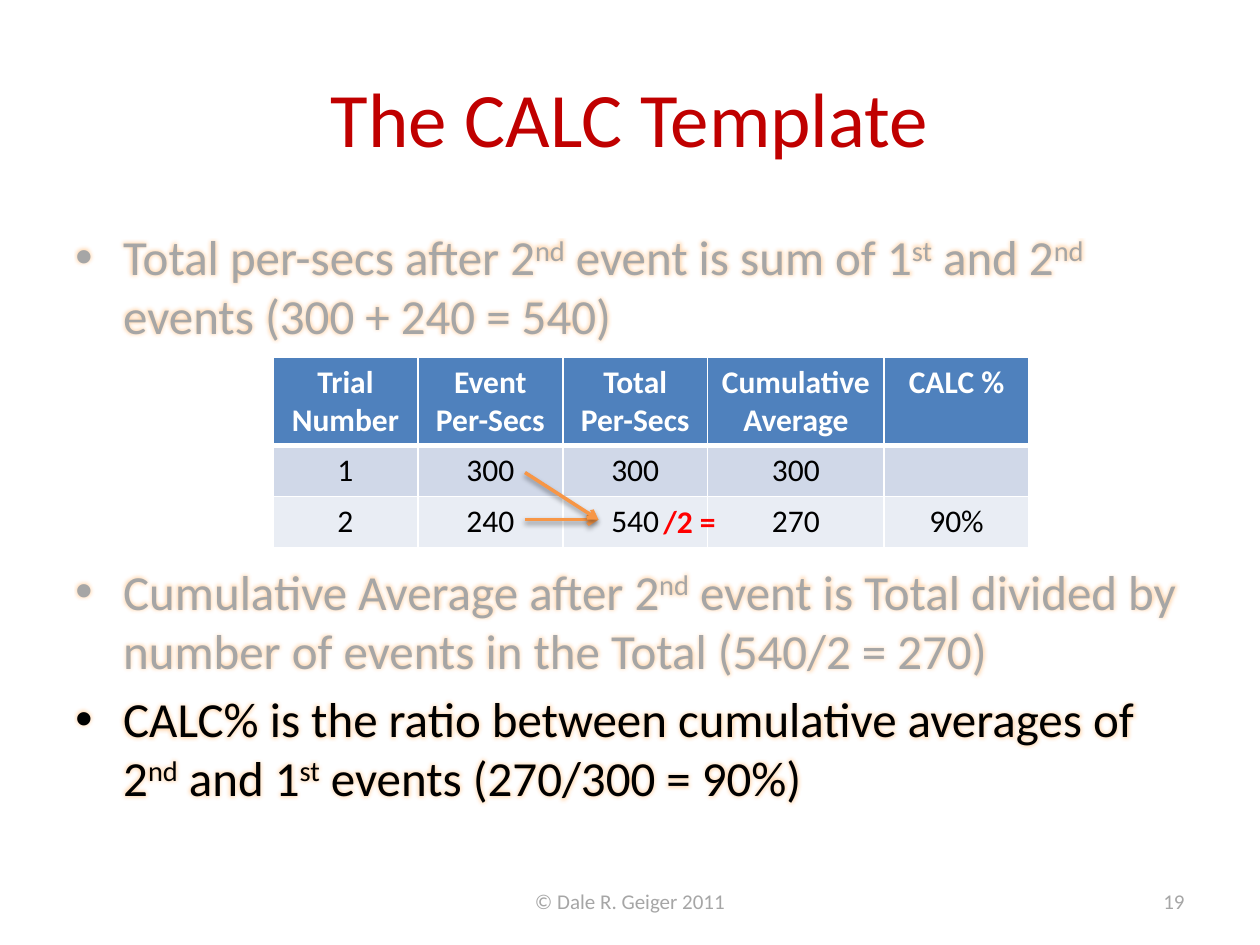
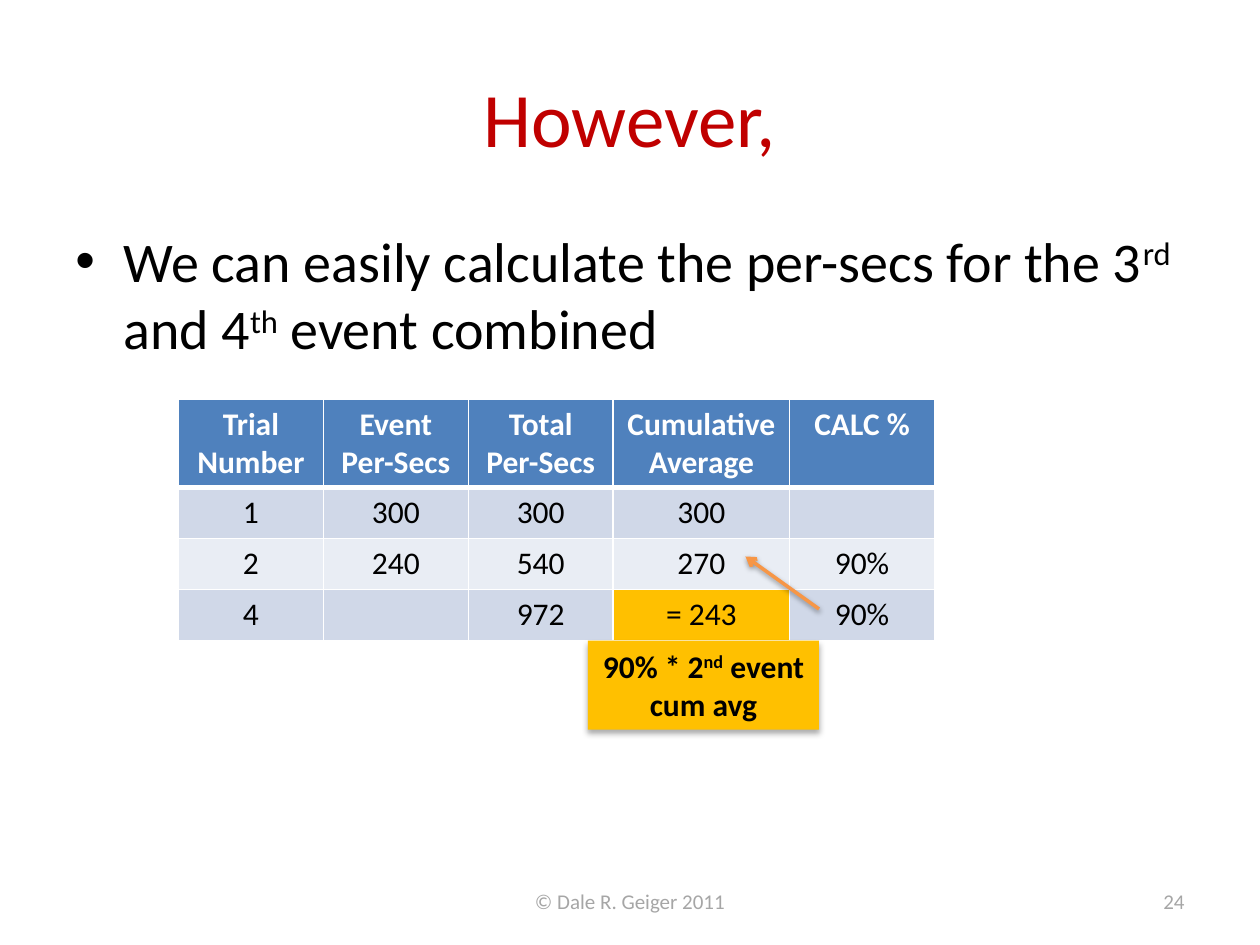
"""Builds two slides on the CALC learning-curve table."""
from dataclasses import dataclass

from lxml.etree import SubElement
from pptx import Presentation
from pptx.dml.color import RGBColor
from pptx.enum.shapes import MSO_CONNECTOR, MSO_SHAPE
from pptx.enum.text import MSO_ANCHOR, PP_ALIGN
from pptx.oxml import parse_xml
from pptx.oxml.ns import nsdecls, qn
from pptx.util import Inches, Pt


@dataclass(frozen=True)
class Theme:
    font: str = "Calibri"
    title: str = "C00000"
    ink: str = "000000"
    muted: str = "A6A6A6"
    paper: str = "FFFFFF"
    header: str = "4F81BD"
    odd_row: str = "D0D8E8"
    even_row: str = "E9EDF4"
    highlight: str = "FFC000"
    arrow: str = "F79646"
    alert: str = "FF0000"
    glow: str = "FF9933"
    title_size: int = 44
    cell_size: int = 18
    footer_size: int = 12


def write(paragraph, marked, size, color, bold=False, align=PP_ALIGN.LEFT):
    paragraph.alignment = align
    for index, piece in enumerate(marked.split("^")):
        run = paragraph.add_run()
        run.text = piece
        run.font.name = theme.font
        run.font.size = Pt(size)
        run.font.bold = bold
        run.font.color.rgb = RGBColor.from_string(color)
        if index % 2:
            run.font._element.set("baseline", "30000")


def cast_shadow(shape, alpha, blur, distance):
    properties = shape._element.spPr
    for effects in properties.findall(qn("a:effectLst")):
        properties.remove(effects)
    properties.append(parse_xml(
        f'<a:effectLst {nsdecls("a")}><a:outerShdw blurRad="{Pt(blur)}" dist="{Pt(distance)}" '
        f'dir="5400000" rotWithShape="0"><a:srgbClr val="{theme.ink}">'
        f'<a:alpha val="{alpha * 1000}"/></a:srgbClr></a:outerShdw></a:effectLst>'))


theme = Theme()
deck = Presentation()
deck.slide_width, deck.slide_height = Inches(10), Inches(7.5)
grid = deck.slide_width / 120

title_area = (6, 3.6, 108, 15)
body_area = (6, 21, 108, 59.4)
credit_area = (41, 83.4, 38, 4.8)
number_area = (86, 83.4, 28, 4.8)
column_spans = [13.8, 13.8, 13.8, 16.8, 13.8]
header_span, row_span = 8.4, 4.87
headings = ["Trial Number", "Event Per-Secs", "Total Per-Secs", "Cumulative Average", "CALC %"]
first_trials = [["1", "300", "300", "300", ""], ["2", "240", "540", "270", "90%"]]

lessons = [
    dict(
        title="The CALC Template", number="19", size=28, glowing=True,
        bullets=[
            ("Total per-secs after 2^nd^ event is sum of 1^st^ and 2^nd^ events (300 + 240 = 540)",
             theme.muted, 5.6),
            ("Cumulative Average after 2^nd^ event is Total divided by number of events "
             "in the Total (540/2 = 270)", theme.muted, 124),
            ("CALC% is the ratio between cumulative averages of 2^nd^ and 1^st^ events "
             "(270/300 = 90%)", theme.ink, 5.6),
        ],
        trials=first_trials, table_corner=(26, 34),
        arrows=[(50, 49.5, 57, 49.5), (50, 45, 57, 49.5)],
    ),
    dict(
        title="However,", number="24", size=32, glowing=False,
        bullets=[("We can easily calculate the per-secs for the 3^rd^ and 4^th^ event combined",
                  theme.ink, 6.4)],
        trials=first_trials + [["4", "", "972", "= 243", "90%"]], table_corner=(17, 38),
        arrows=[(78, 58, 71, 53)],
    ),
]

for lesson in lessons:
    slide = deck.slides.add_slide(deck.slide_layouts[6])

    for area, wording, size, color, align in [
        (title_area, lesson["title"], theme.title_size, theme.title, PP_ALIGN.CENTER),
        (credit_area, "© Dale R. Geiger 2011", theme.footer_size, theme.muted, PP_ALIGN.CENTER),
        (number_area, lesson["number"], theme.footer_size, theme.muted, PP_ALIGN.RIGHT),
    ]:
        frame = slide.shapes.add_textbox(*[round(n * grid) for n in area]).text_frame
        frame.word_wrap = True
        frame.vertical_anchor = MSO_ANCHOR.MIDDLE
        write(frame.paragraphs[0], wording, size, color, align=align)

    body = slide.shapes.add_textbox(*[round(n * grid) for n in body_area]).text_frame
    body.word_wrap = True
    for index, (wording, color, gap) in enumerate(lesson["bullets"]):
        point = body.add_paragraph() if index else body.paragraphs[0]
        write(point, wording, lesson["size"], color)
        point.space_before = Pt(gap)
        layout = point._p.get_or_add_pPr()
        layout.set("marL", str(Inches(0.38)))
        layout.set("indent", str(-Inches(0.38)))
        SubElement(layout, qn("a:buFont"), typeface="Arial")
        SubElement(layout, qn("a:buChar"), char="•")
        if lesson["glowing"]:
            for run in point.runs:
                run.font._element.find(qn("a:solidFill")).addnext(parse_xml(
                    f'<a:effectLst {nsdecls("a")}><a:glow rad="{Pt(5)}"><a:srgbClr '
                    f'val="{theme.glow}"><a:alpha val="40000"/></a:srgbClr></a:glow></a:effectLst>'))

    rows = [headings] + lesson["trials"]
    left, top = lesson["table_corner"]
    height = header_span + row_span * len(lesson["trials"])
    table = slide.shapes.add_table(
        len(rows), len(headings),
        *[round(n * grid) for n in (left, top, sum(column_spans), height)]).table
    for column, span in zip(table.columns, column_spans):
        column.width = round(span * grid)
    for r, values in enumerate(rows):
        table.rows[r].height = round((row_span if r else header_span) * grid)
        for c, value in enumerate(values):
            cell = table.cell(r, c)
            fill = theme.header if r == 0 else theme.odd_row if r % 2 else theme.even_row
            if value.startswith("="):
                fill = theme.highlight
            cell.fill.solid()
            cell.fill.fore_color.rgb = RGBColor.from_string(fill)
            write(cell.text_frame.paragraphs[0], value, theme.cell_size,
                  theme.ink if r else theme.paper, r == 0, PP_ALIGN.CENTER)
            for position, side in enumerate(["lnL", "lnR", "lnT", "lnB"]):
                thick = (r, side) in [(0, "lnB"), (1, "lnT")]
                cell._tc.get_or_add_tcPr().insert(position, parse_xml(
                    f'<a:{side} {nsdecls("a")} w="{Pt(3 if thick else 1)}"><a:solidFill>'
                    f'<a:srgbClr val="{theme.paper}"/></a:solidFill></a:{side}>'))

    if lesson["glowing"]:
        divisor = slide.shapes.add_textbox(*[round(n * grid) for n in (62, 47.2, 7.4, 4.8)])
        divisor.text_frame.word_wrap = False
        write(divisor.text_frame.paragraphs[0], "/2 =", theme.cell_size, theme.alert, True)
    else:
        callout = slide.shapes.add_shape(
            MSO_SHAPE.RECTANGLE, *[round(n * grid) for n in (56, 61, 22, 8.5)])
        callout.fill.solid()
        callout.fill.fore_color.rgb = RGBColor.from_string(theme.highlight)
        callout.line.fill.background()
        cast_shadow(callout, 32, 3.5, 2.2)
        callout.text_frame.word_wrap = True
        callout.text_frame.vertical_anchor = MSO_ANCHOR.TOP
        write(callout.text_frame.paragraphs[0], "90% * 2^nd^ event cum avg",
              theme.cell_size, theme.ink, True, PP_ALIGN.CENTER)

    for ends in lesson["arrows"]:
        arrow = slide.shapes.add_connector(
            MSO_CONNECTOR.STRAIGHT, *[round(n * grid) for n in ends])
        arrow.line.width = Pt(2)
        arrow.line.color.rgb = RGBColor.from_string(theme.arrow)
        SubElement(arrow._element.spPr.find(qn("a:ln")), qn("a:tailEnd"), type="arrow")
        cast_shadow(arrow, 38, 3.1, 1.6)

deck.save("out.pptx")
